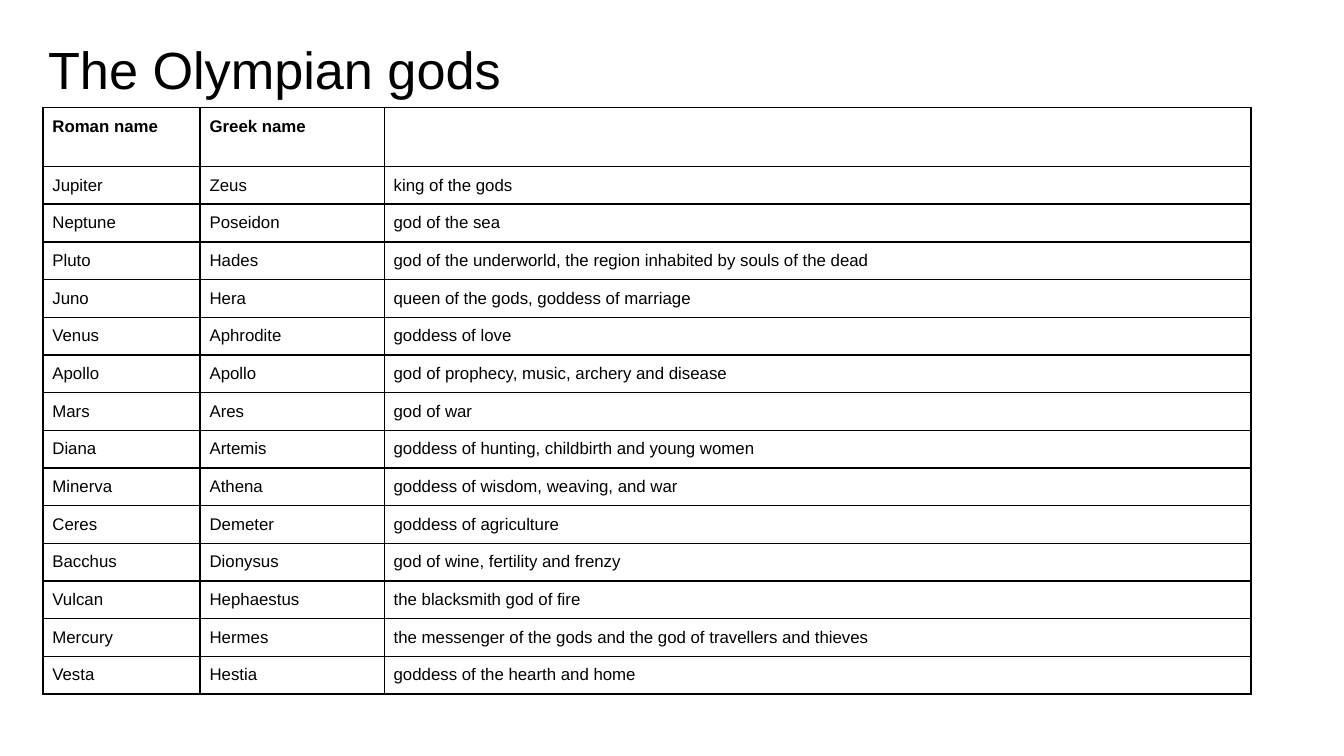
from lxml import etree
from pptx import Presentation
from pptx.dml.color import RGBColor
from pptx.enum.text import MSO_ANCHOR, PP_ALIGN
from pptx.oxml.ns import qn
from pptx.util import Inches, Pt

JUSTIFY = PP_ALIGN.JUSTIFY
TOP = MSO_ANCHOR.TOP

COLUMN_WIDTHS = [1.17, 1.37, 6.45]
HEADER_HEIGHT = 0.44
ROW_HEIGHT = 0.28
GODS = [
    ("Roman name", "Greek name", ""),
    ("Jupiter", "Zeus", "king of the gods"),
    ("Neptune", "Poseidon", "god of the sea"),
    ("Pluto", "Hades", "god of the underworld, the region inhabited by souls of the dead"),
    ("Juno", "Hera", "queen of the gods, goddess of marriage"),
    ("Venus", "Aphrodite", "goddess of love"),
    ("Apollo", "Apollo", "god of prophecy, music, archery and disease"),
    ("Mars", "Ares", "god of war"),
    ("Diana", "Artemis", "goddess of hunting, childbirth and young women"),
    ("Minerva", "Athena", "goddess of wisdom, weaving, and war"),
    ("Ceres", "Demeter", "goddess of agriculture"),
    ("Bacchus", "Dionysus", "god of wine, fertility and frenzy"),
    ("Vulcan", "Hephaestus", "the blacksmith god of fire"),
    ("Mercury", "Hermes", "the messenger of the gods and the god of travellers and thieves"),
    ("Vesta", "Hestia", "goddess of the hearth and home"),
]


def color(value):
    return RGBColor.from_string(value)


class SlideBuilder:
    """Draws styled elements on the current slide."""

    font_name = "Arial"
    ink = "000000"
    paper = "FFFFFF"

    def __init__(self, slide):
        self.slide = slide

    def style(self, paragraph, size, bold=False):
        for run in paragraph.runs:
            run.font.name = self.font_name
            run.font.size = Pt(size)
            run.font.bold = bold
            run.font.color.rgb = color(self.ink)

    def title(self, text, left, top, width, height):
        shape = self.slide.shapes.add_textbox(
            Inches(left), Inches(top), Inches(width), Inches(height))
        text_frame = shape.text_frame
        text_frame.word_wrap = True
        text_frame.vertical_anchor = TOP
        text_frame.margin_top = Inches(0.11)
        text_frame.margin_bottom = 0
        text_frame.text = text
        self.style(text_frame.paragraphs[0], 28)

    def borders(self, cell, width=1):
        properties = cell._tc.get_or_add_tcPr()
        for side in ("a:lnL", "a:lnR", "a:lnT", "a:lnB"):
            line = etree.SubElement(properties, qn(side), w=str(Pt(width)))
            fill = etree.SubElement(line, qn("a:solidFill"))
            etree.SubElement(fill, qn("a:srgbClr"), val=self.ink)

    def cell(self, cell, text, bold):
        cell.margin_left = cell.margin_right = cell.margin_top = Inches(0.07)
        cell.margin_bottom = Inches(0.06)
        self.borders(cell)
        cell.fill.solid()
        cell.fill.fore_color.rgb = color(self.paper)
        cell.text_frame.text = text
        paragraph = cell.text_frame.paragraphs[0]
        paragraph.alignment = JUSTIFY
        self.style(paragraph, 9, bold)

    def table(self, rows, left, top, column_widths, row_heights):
        table = self.slide.shapes.add_table(
            len(rows), len(column_widths), Inches(left), Inches(top),
            Inches(sum(column_widths)), Inches(sum(row_heights))).table
        table.horz_banding = False
        for column, width in zip(table.columns, column_widths):
            column.width = Inches(width)
        for index, (row, height) in enumerate(zip(table.rows, row_heights)):
            row.height = Inches(height)
            for cell, text in zip(row.cells, rows[index]):
                self.cell(cell, text, bold=index == 0)


def main():
    presentation = Presentation()
    presentation.slide_width = Inches(10)
    presentation.slide_height = Inches(10 * 9 / 16)
    builder = SlideBuilder(presentation.slides.add_slide(presentation.slide_layouts[6]))
    builder.title("The Olympian gods", 0.26, 0.17, 9.32, 0.63)
    row_heights = [HEADER_HEIGHT] + [ROW_HEIGHT] * (len(GODS) - 1)
    builder.table(GODS, 0.32, 0.8, COLUMN_WIDTHS, row_heights)
    presentation.save("out.pptx")


if __name__ == "__main__":
    main()
